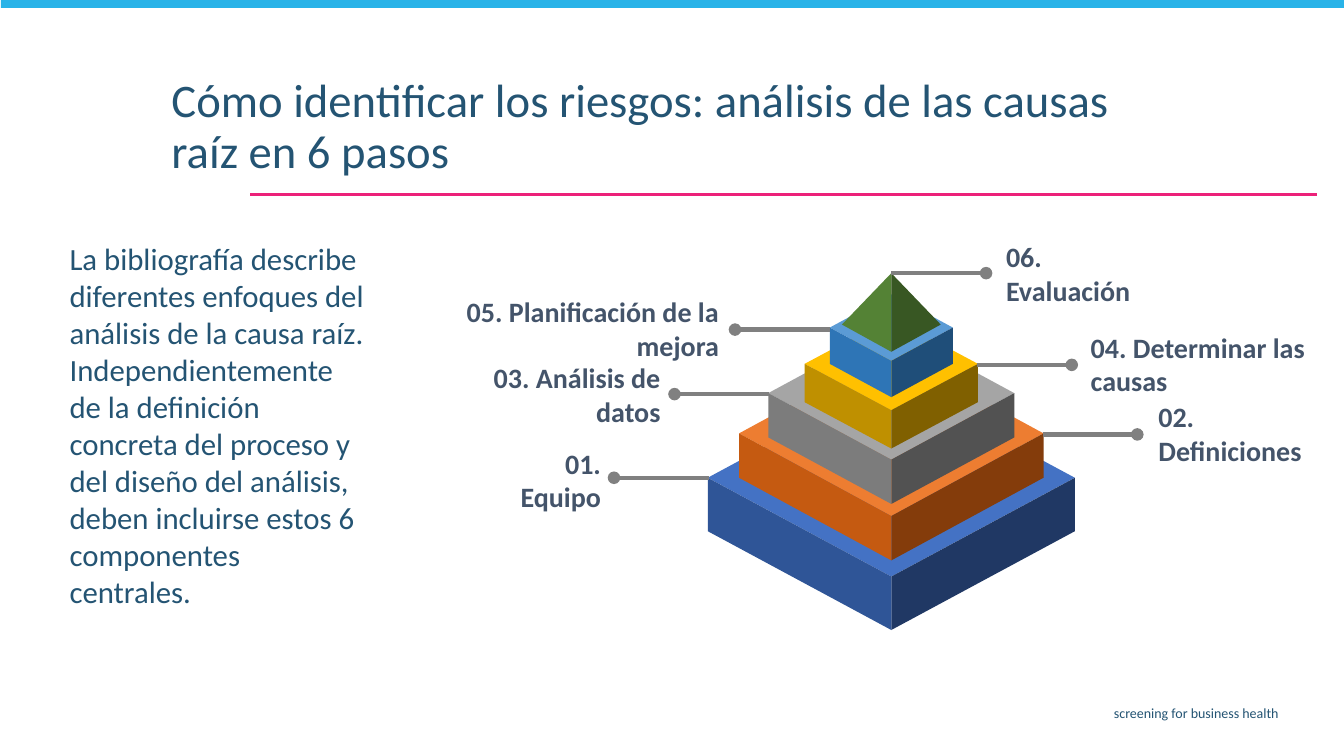
from dataclasses import dataclass

from lxml.etree import SubElement
from pptx import Presentation
from pptx.dml.color import RGBColor
from pptx.enum.shapes import MSO_CONNECTOR, MSO_SHAPE
from pptx.enum.text import MSO_ANCHOR, MSO_AUTO_SIZE, PP_ALIGN
from pptx.oxml.ns import qn
from pptx.util import Pt

PX = 9144
CENTRE = 884
SLOPE = 0.54
LEADER = 94


@dataclass(frozen=True)
class Theme:
    """Colours, font and type sizes of the slide."""
    font: str = "Calibri"
    ink: str = "245473"
    label: str = "44546A"
    leader: str = "808080"
    bar: str = "29B3E8"
    rule: str = "EC2179"
    peak: tuple = ("548235", "385723")
    title_size: float = 33.3
    body_size: float = 22
    label_size: float = 20
    footer_size: float = 10


T = Theme()

TIERS = [
    (182, 474, 53, ("4472C4", "203864", "2F5597")),
    (151, 430, 44, ("ED7D31", "843C0B", "C55A11")),
    (122, 390, 44, ("A5A5A5", "525252", "7C7C7C")),
    (86, 361, 38, ("FFC000", "806000", "BF9000")),
    (61, 325, 36, ("5B9BD5", "1F4E79", "2E75B6")),
]

STEPS = [
    ("06. Evaluación", 884, 271, 1, 988, 249, 176),
    ("04. Determinar las causas", 969, 362, 1, 1072, 339, 263),
    ("02. Definiciones", 1034, 431, 1, 1139, 408, 181),
    ("01. Equipo", 703, 474, -1, 486, 454, 120),
    ("03. Análisis de datos", 763, 391, -1, 458, 369, 207),
    ("05. Planificación de la mejora", 823, 327, -1, 410, 304, 313),
]


def emu(*lengths):
    """Turn px lengths into EMU."""
    return [n * PX for n in lengths]


def write(sp, text, size, color=T.ink, bold=False, align=PP_ALIGN.LEFT,
          anchor=MSO_ANCHOR.TOP, spacing=None, margins=(10, 5)):
    """Fill a shape with one formatted paragraph."""
    tf = sp.text_frame
    tf.word_wrap = True
    tf.auto_size = MSO_AUTO_SIZE.NONE
    tf.vertical_anchor = anchor
    tf.margin_left = tf.margin_right = margins[0] * PX
    tf.margin_top = tf.margin_bottom = margins[1] * PX
    p = tf.paragraphs[0]
    p.alignment = align
    p.space_before = Pt(0)
    if spacing:
        p.line_spacing = spacing
    r = p.add_run()
    r.text = text
    r.font.name = T.font
    r.font.size = Pt(size)
    r.font.bold = bold
    r.font.color.rgb = RGBColor.from_string(color)


def add_text(s, box, text, size, **style):
    """Add a text box with one formatted paragraph."""
    write(s.shapes.add_textbox(*emu(*box)), text, size, **style)


def paint(sp, color):
    """Give a shape a flat fill without outline or shadow."""
    sp.shadow.inherit = False
    sp.fill.solid()
    sp.fill.fore_color.rgb = RGBColor.from_string(color)
    sp.line.fill.background()


def add_face(s, points, color):
    """Add one filled polygon."""
    fb = s.shapes.build_freeform(*points[0], scale=PX)
    fb.add_line_segments(points[1:], close=True)
    paint(fb.convert_to_shape(), color)


def add_line(s, start, end, color, width, dot=False):
    """Add a straight line, with a round end if asked."""
    sp = s.shapes.add_connector(MSO_CONNECTOR.STRAIGHT, *emu(*start, *end))
    sp.line.width = Pt(width)
    sp.line.color.rgb = RGBColor.from_string(color)
    spPr = sp.element.spPr
    if dot:
        SubElement(spPr.find(qn("a:ln")), qn("a:tailEnd"), type="oval")
    SubElement(spPr, qn("a:effectLst"))


def add_tier(s, half, mid, depth, colors):
    """Add a block with its top, right and left faces."""
    rise = round(half * SLOPE)
    front = mid + rise
    top, right, left = colors
    add_face(s, [(CENTRE, mid - rise), (CENTRE + half, mid),
                 (CENTRE, front), (CENTRE - half, mid)], top)
    for side, color in ((1, right), (-1, left)):
        x = CENTRE + side * half
        add_face(s, [(CENTRE, front + depth), (x, mid + depth),
                     (x, mid), (CENTRE, front)], color)


def add_peak(s):
    """Add the two faces of the pyramid's tip."""
    for side, color in zip((-1, 1), T.peak):
        add_face(s, [(CENTRE, 271), (CENTRE + side * 49, 322),
                     (CENTRE, 349)], color)


def add_step(s, text, x, y, side, left, top, width):
    """Add a leader line and its label."""
    add_line(s, (x, y), (x + side * LEADER, y), T.leader, 3, dot=True)
    add_text(s, (left, top, width, 44), text, T.label_size, color=T.label,
             bold=True, anchor=MSO_ANCHOR.MIDDLE,
             align=PP_ALIGN.LEFT if side > 0 else PP_ALIGN.RIGHT)


def add_title(s, box, text):
    """Place and fill the title placeholder."""
    sp = s.shapes.title
    sp.left, sp.top, sp.width, sp.height = emu(*box)
    write(sp, text, T.title_size, spacing=0.9)


def main():
    """Build the slide and save it."""
    prs = Presentation()
    prs.slide_width, prs.slide_height = emu(1333, 750)
    s = prs.slides.add_slide(prs.slide_layouts[5])

    add_line(s, (1306, 193), (248, 193), T.rule, 1.5)
    paint(s.shapes.add_shape(MSO_SHAPE.RECTANGLE, *emu(1, -2, 1334, 10)), T.bar)
    add_text(s, (365, 694, 913, 29), "screening for business health",
             T.footer_size, align=PP_ALIGN.RIGHT)
    add_title(s, (160, 72, 968, 76),
              "Cómo identificar los riesgos: análisis de las causas raíz en 6 pasos")
    add_text(s, (60, 234, 311, 342),
             "La bibliografía describe diferentes enfoques del análisis de la "
             "causa raíz. Independientemente de la definición concreta del "
             "proceso y del diseño del análisis, deben incluirse estos 6 "
             "componentes centrales.", T.body_size, margins=(9, 4))
    for tier in TIERS:
        add_tier(s, *tier)
    add_peak(s)
    for step in STEPS:
        add_step(s, *step)
    prs.save("out.pptx")


if __name__ == "__main__":
    main()
